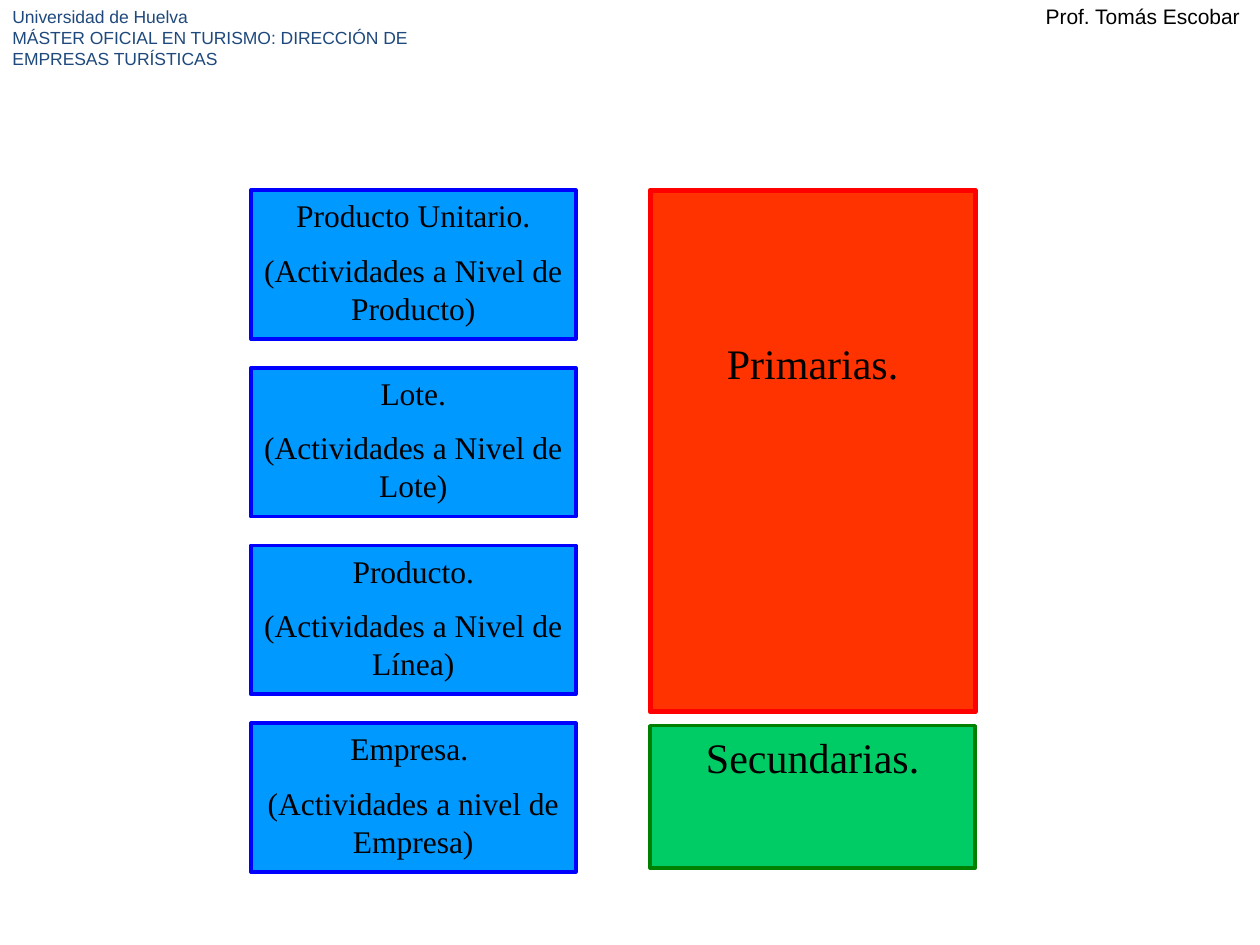
from pptx import Presentation
from pptx.dml.color import RGBColor
from pptx.enum.shapes import MSO_SHAPE
from pptx.enum.text import MSO_ANCHOR, PP_ALIGN
from pptx.util import Inches, Pt


def color(code):
    return RGBColor.from_string(code)


def style(para, font, size, code):
    for run in para.runs:
        run.font.name = font
        run.font.size = Pt(size)
        run.font.color.rgb = color(code)


def add_label(slide, spot, text, size, code, wrap):
    box = slide.shapes.add_textbox(*map(Inches, spot))
    frame = box.text_frame
    frame.word_wrap = wrap
    para = frame.paragraphs[0]
    para.text = text
    style(para, "Arial", size, code)


def add_box(slide, spot, lines, size, fill, edge, width=2, inset=0.05):
    box = slide.shapes.add_shape(MSO_SHAPE.RECTANGLE, *map(Inches, spot))
    box.shadow.inherit = False
    box.fill.solid()
    box.fill.fore_color.rgb = color(fill)
    box.line.color.rgb = color(edge)
    box.line.width = Pt(width)
    frame = box.text_frame
    frame.word_wrap = True
    frame.vertical_anchor = MSO_ANCHOR.TOP
    frame.margin_top = Inches(inset)
    frame.text = "\n".join(lines)
    for index, para in enumerate(frame.paragraphs):
        para.alignment = PP_ALIGN.CENTER
        if index:
            para.space_before = Pt(9.4)
        style(para, "Times New Roman", size, "000000")


def main():
    deck = Presentation()
    deck.slide_width = Inches(10)
    deck.slide_height = Inches(7.5)
    slide = deck.slides.add_slide(deck.slide_layouts[6])

    add_label(slide, (8.2, -0.02, 1.77, 0.3), "Prof. Tomás Escobar",
              12, "000000", False)
    add_label(slide, (0, 0, 3.39, 0.87),
              "Universidad de Huelva\vMÁSTER OFICIAL EN TURISMO: "
              "DIRECCIÓN DE EMPRESAS TURÍSTICAS", 10, "1F497D", True)

    levels = [
        ("Producto Unitario.", "(Actividades a Nivel de Producto)"),
        ("Lote.", "(Actividades a Nivel de Lote)"),
        ("Producto.", "(Actividades a Nivel de Línea)"),
        ("Empresa. ", "(Actividades a nivel de Empresa)"),
    ]
    top, step, width = 1.51, 1.41, 2.58
    for row, lines in enumerate(levels):
        add_box(slide, (1.99, top + row * step, width, 1.18), lines,
                18, "0099FF", "0000FF")

    add_box(slide, (5.16, top, width, 4.14), ["Primarias."],
            24, "FF3300", "FF0000", 3, 1.17)
    add_box(slide, (5.16, 5.76, width, 1.13), ["Secundarias."],
            24, "00CC66", "008000")
    deck.save("out.pptx")


if __name__ == "__main__":
    main()
